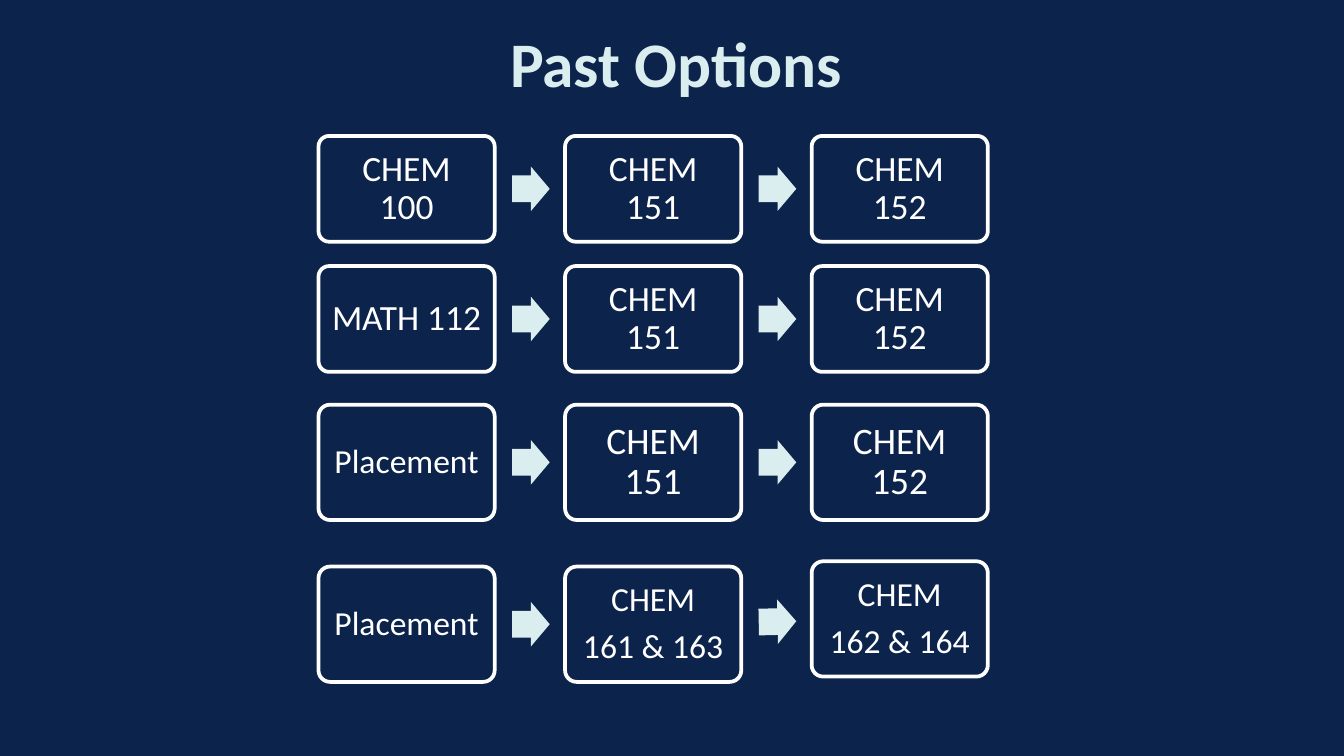
import math

import pptx
import pptx.dml.color
import pptx.enum.shapes
import pptx.enum.text
import pptx.util

Cm = pptx.util.Cm
Pt = pptx.util.Pt
SHAPES = pptx.enum.shapes.MSO_SHAPE
CENTER = pptx.enum.text.PP_ALIGN.CENTER
MIDDLE = pptx.enum.text.MSO_ANCHOR.MIDDLE

NAVY, ICE, WHITE = "0C234B", "DAEDEF", "FFFFFF"

COURSE_WIDTH, COURSE_PITCH = 3.33, 4.66
ARROW_WIDTH, ARROW_HEIGHT, ARROW_OFFSET = 0.71, 0.84, 3.66
PATHWAY_LEFT = 6.02

# Each pathway: top, height, then courses as (lines, size, padding, vertical shift)
PATHWAYS = [
    (2.57, 2.0, [(["CHEM 100"], 19, 0.2, 0), (["CHEM 151"], 19, 0.2, 0),
                 (["CHEM 152"], 19, 0.2, 0)]),
    (5.03, 2.0, [(["MATH 112"], 19, 0.15, 0), (["CHEM 151"], 19, 0.2, 0),
                 (["CHEM 152"], 19, 0.2, 0)]),
    (7.65, 2.18, [(["Placement"], 18, 0.2, 0), (["CHEM 151"], 20, 0.2, 0),
                  (["CHEM 152"], 20, 0.2, 0)]),
    (10.71, 2.18, [(["Placement"], 18, 0.2, 0), (["CHEM", "161 & 163"], 18, 0.2, 0),
                   (["CHEM", "162 & 164"], 18, 0.2, -0.1)]),
]


def color(hex_value):
    return pptx.dml.color.RGBColor.from_string(hex_value)


def apply(target, values):
    for name, value in values.items():
        setattr(target, name, value)


def write(frame, lines, padding, font, spacing):
    inset = Cm(padding)
    apply(frame, {"word_wrap": True, "vertical_anchor": MIDDLE,
                  "margin_left": inset, "margin_right": inset,
                  "margin_top": inset, "margin_bottom": inset})
    for index, line in enumerate(lines):
        paragraph = frame.add_paragraph() if index else frame.paragraphs[0]
        apply(paragraph, {"alignment": CENTER, "line_spacing": spacing})
        if index:
            paragraph.space_before = Pt(6)
        run = paragraph.add_run()
        run.text = line
        apply(run.font, {"name": "Calibri", "size": Pt(font["size"]),
                         "bold": font.get("bold", False)})
        run.font.color.rgb = color(font["color"])


def add_filled(shapes, kind, box, fill):
    shape = shapes.add_shape(kind, *map(Cm, box))
    shape.shadow.inherit = False
    shape.fill.solid()
    shape.fill.fore_color.rgb = color(fill)
    return shape


def add_title(slide, box):
    title = slide.shapes.add_textbox(*map(Cm, box))
    write(title.text_frame, ["Past Options"], 0.1,
          {"size": 34, "bold": True, "color": ICE}, 1.0)


def add_course(shapes, box, lines, size, padding):
    course = add_filled(shapes, SHAPES.ROUNDED_RECTANGLE, box, NAVY)
    course.adjustments[0] = 0.1
    course.line.color.rgb = color(WHITE)
    course.line.width = Pt(2)
    write(course.text_frame, lines, padding, {"size": size, "color": WHITE}, 0.9)


def add_arrow(shapes, box, rise):
    arrow = add_filled(shapes, SHAPES.RIGHT_ARROW, box, ICE)
    arrow.line.fill.background()
    arrow.adjustments[0] = 0.6
    arrow.adjustments[1] = 0.5
    arrow.rotation = math.degrees(math.atan2(rise, COURSE_PITCH))


def add_pathway(slide, left, top, height, courses):
    shapes = slide.shapes.add_group_shape().shapes
    for index, (lines, size, padding, shift) in enumerate(courses):
        x = left + index * COURSE_PITCH
        add_course(shapes, (x, top + shift, COURSE_WIDTH, height), lines, size, padding)
        # Arrow to the next course, centred between the two heights
        if index + 1 < len(courses):
            next_shift = courses[index + 1][3]
            y = top + (shift + next_shift + height - ARROW_HEIGHT) / 2
            add_arrow(shapes, (x + ARROW_OFFSET, y, ARROW_WIDTH, ARROW_HEIGHT),
                      next_shift - shift)


def main():
    deck = pptx.Presentation()
    apply(deck, {"slide_width": Cm(25.4), "slide_height": Cm(14.29)})
    slide = deck.slides.add_slide(deck.slide_layouts[6])
    slide.background.fill.solid()
    slide.background.fill.fore_color.rgb = color(NAVY)

    add_title(slide, (3.53, 0.33, 18.49, 1.68))
    for top, height, courses in PATHWAYS:
        add_pathway(slide, PATHWAY_LEFT, top, height, courses)

    deck.save("out.pptx")


if __name__ == "__main__":
    main()
